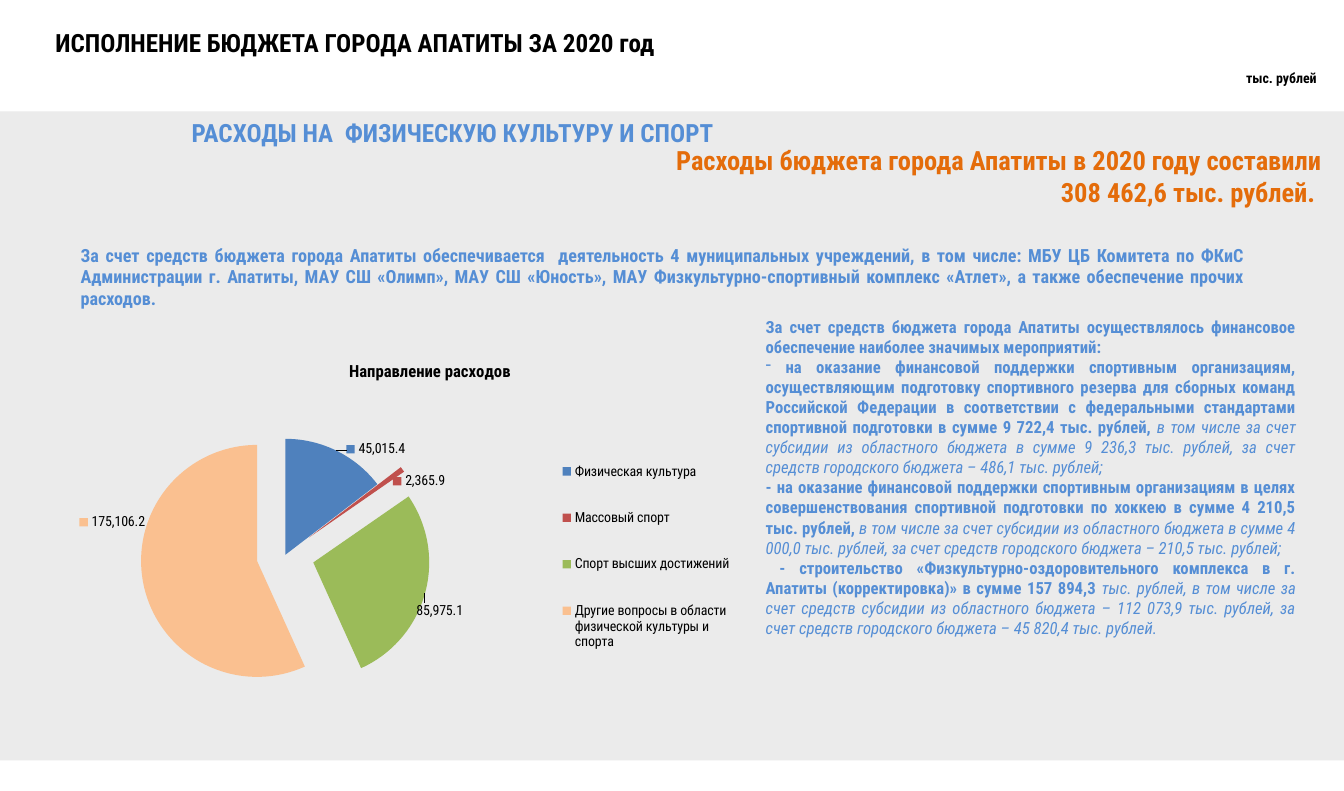
import pptx
import pptx.chart.data
import pptx.dml.color
import pptx.enum.chart
import pptx.enum.shapes
import pptx.enum.text
import pptx.oxml
import pptx.oxml.ns
import pptx.util
from pptx.util import Cm

FONT = "Roboto Condensed"
COLORS = {
    "panel": "EBEBEB",
    "blue": "558ED5",
    "orange": "E46C0A",
    "black": "000000",
    "physical": "4F81BD",
    "mass": "C0504D",
    "elite": "9BBB59",
    "other": "FAC090",
}
EXPENSES = [
    ("Физическая культура", 45015.4, "physical", 0, (0.01, 0.03)),
    ("Массовый спорт", 2365.9, "mass", 25, (-0.02, 0.06)),
    ("Спорт высших достижений", 85975.1, "elite", 25, (-0.02, 0.02)),
    ("Другие вопросы в области физической культуры и спорта", 175106.2, "other", 25,
     (0.01, -0.19)),
]
INTRO = (
    "За счет средств бюджета города Апатиты обеспечивается  деятельность 4 муниципальных "
    "учреждений, в том числе: МБУ ЦБ Комитета по ФКиС Администрации г. Апатиты, "
    "МАУ СШ «Олимп», МАУ СШ «Юность», МАУ Физкультурно-спортивный комплекс «Атлет», "
    "а также обеспечение прочих расходов."
)
EVENTS = [
    ("За счет средств бюджета города Апатиты осуществлялось финансовое обеспечение "
     "наиболее значимых мероприятий: ", ""),
    (" на оказание финансовой поддержки спортивным организациям, осуществляющим "
     "подготовку спортивного резерва для сборных команд Российской Федерации в "
     "соответствии с федеральными стандартами спортивной подготовки в сумме "
     "9 722,4 тыс. рублей, ",
     "в том числе за счет субсидии из областного бюджета в сумме 9 236,3 тыс. рублей, "
     "за счет средств городского бюджета – 486,1 тыс. рублей;"),
    ("- на оказание финансовой поддержки спортивным организациям в целях "
     "совершенствования спортивной подготовки по хоккею в сумме 4 210,5 тыс. рублей, ",
     "в том числе за счет субсидии из областного бюджета в сумме 4 000,0 тыс. рублей, "
     "за счет средств городского бюджета – 210,5 тыс. рублей;"),
    ("- строительство «Физкультурно-оздоровительного комплекса в г. Апатиты "
     "(корректировка)» в сумме 157 894,3 ",
     "тыс. рублей, в том числе за счет средств субсидии из областного бюджета – "
     "112 073,9 тыс. рублей, за счет средств городского бюджета – 45 820,4 тыс. рублей."),
]
ALIGN = pptx.enum.text.PP_ALIGN
ANCHOR = pptx.enum.text.MSO_ANCHOR


def rgb(name):
    return pptx.dml.color.RGBColor.from_string(COLORS[name])


def chart_xml(tag, attributes="", content=""):
    namespace = pptx.oxml.ns.nsdecls("c")
    return pptx.oxml.parse_xml(f"<c:{tag} {namespace} {attributes}>{content}</c:{tag}>")


def style_font(font, size, color, bold=False, italic=False):
    font.name = FONT
    font.size = pptx.util.Pt(size)
    font.bold = bold
    font.italic = italic
    font.color.rgb = rgb(color)


def inside(box, left, top, width, height):
    return Cm(box[0] + left), Cm(box[1] + top), Cm(width), Cm(height)


def fill_text(shape, paragraphs, size, color, align, anchor=ANCHOR.TOP):
    frame = shape.text_frame
    frame.word_wrap = True
    frame.auto_size = pptx.enum.text.MSO_AUTO_SIZE.NONE
    frame.vertical_anchor = anchor
    frame.margin_left = frame.margin_right = Cm(0.3)
    frame.margin_top = frame.margin_bottom = Cm(0.15)
    for index, (strong, detail) in enumerate(paragraphs):
        paragraph = frame.paragraphs[0] if index == 0 else frame.add_paragraph()
        paragraph.alignment = align
        for text, bold in ((strong, True), (detail, False)):
            if text:
                run = paragraph.add_run()
                run.text = text
                style_font(run.font, size, color, bold, not bold)
    return frame


def add_text(slide, position, paragraphs, size, color, align, anchor=ANCHOR.TOP):
    shape = slide.shapes.add_textbox(*position)
    return fill_text(shape, paragraphs, size, color, align, anchor)


def add_header(slide, box):
    title = slide.shapes.title
    title.left, title.top, title.width, title.height = inside(box, 1.1, 0.54, 22.8, 1.05)
    fill_text(title, [("ИСПОЛНЕНИЕ БЮДЖЕТА ГОРОДА АПАТИТЫ ЗА 2020 год", "")],
              18, "black", ALIGN.LEFT)
    add_text(slide, inside(box, 30.41, 1.61, 3.2, 0.74), [("тыс. рублей", "")],
             10, "black", ALIGN.RIGHT)


def add_overview(slide, box):
    panel = slide.shapes.add_shape(pptx.enum.shapes.MSO_SHAPE.RECTANGLE,
                                   *inside(box, 0, 0, *box[2:]))
    panel.shadow.inherit = False
    panel.fill.solid()
    panel.fill.fore_color.rgb = rgb("panel")
    panel.line.fill.background()
    add_text(slide, inside(box, 2.41, 0, 18.08, 1.09),
             [("РАСХОДЫ НА  ФИЗИЧЕСКУЮ КУЛЬТУРУ И СПОРТ", "")], 18, "blue", ALIGN.CENTER)
    add_text(slide, inside(box, 10.95, 0.68, 22.78, 1.9),
             [("Расходы бюджета города Апатиты в 2020 году составили", ""),
              ("308 462,6 тыс. рублей. ", "")],
             19, "orange", ALIGN.RIGHT, ANCHOR.MIDDLE)
    add_text(slide, inside(box, 1.74, 3.2, 30, 1.98), [(INTRO, "")],
             13, "blue", ALIGN.JUSTIFY)


def add_events(slide, box):
    frame = add_text(slide, inside(box, 0, 0, *box[2:]), EVENTS, 12, "blue", ALIGN.JUSTIFY)
    dashed = frame.paragraphs[1]._p.get_or_add_pPr()
    dashed.set("marL", "0")
    dashed.set("indent", "0")
    dashed.append(pptx.oxml.parse_xml(
        f'<a:buChar {pptx.oxml.ns.nsdecls("a")} char="-"/>'))
    frame.paragraphs[3]._p.get_or_add_pPr().set("indent", str(Cm(0.35)))


def set_layout(element, after=None, **places):
    layout = element.find(pptx.oxml.ns.qn("c:layout"))
    if layout is not None:
        element.remove(layout)
    settings = "".join(f'<c:{name} val="{value}"/>' for name, value in places.items())
    layout = chart_xml("layout", content=f"<c:manualLayout>{settings}</c:manualLayout>")
    if after:
        element.find(pptx.oxml.ns.qn(after)).addnext(layout)
    else:
        element.insert(0, layout)


def style_slices(series):
    qn = pptx.oxml.ns.qn
    outside = pptx.enum.chart.XL_LABEL_POSITION.OUTSIDE_END
    labels = series.data_labels
    labels.show_value = True
    labels.number_format = "#,##0.0"
    labels.number_format_is_linked = False
    labels.position = outside
    style_font(labels.font, 10, "black")
    series._element.find(qn("c:tx")).addnext(chart_xml("explosion", 'val="25"'))
    for index, (_, _, color, explosion, (shift_x, shift_y)) in enumerate(EXPENSES):
        point = series.points[index]
        point.format.fill.solid()
        point.format.fill.fore_color.rgb = rgb(color)
        slice_properties = series._element.findall(qn("c:dPt"))[index].find(qn("c:spPr"))
        slice_properties.addprevious(chart_xml("explosion", f'val="{explosion}"'))
        point.data_label.position = outside
        style_font(point.data_label.font, 10, "black")
        label = labels._element.findall(qn("c:dLbl"))[index]
        label.find(qn("c:showLegendKey")).set("val", "0" if color == "elite" else "1")
        set_layout(label, "c:idx", x=shift_x, y=shift_y)


def add_expense_chart(slide, box):
    data = pptx.chart.data.CategoryChartData(number_format="#,##0.0")
    data.categories = [expense[0] for expense in EXPENSES]
    data.add_series("Направление расходов", [expense[1] for expense in EXPENSES])
    chart = slide.shapes.add_chart(pptx.enum.chart.XL_CHART_TYPE.PIE,
                                   *inside(box, 0, 0, *box[2:]), data).chart
    style_font(chart.font, 10, "black")
    chart.has_title = True
    run = chart.chart_title.text_frame.paragraphs[0].add_run()
    run.text = "Направление расходов"
    style_font(run.font, 12, "black", True)
    chart.has_legend = True
    chart.legend.position = pptx.enum.chart.XL_LEGEND_POSITION.RIGHT
    chart.legend.include_in_layout = False
    style_font(chart.legend.font, 10, "black")
    chart.plots[0].vary_by_categories = True
    style_slices(chart.plots[0].series[0])

    edges = {"xMode": "edge", "yMode": "edge"}
    set_layout(chart.chart_title._element, "c:tx", **edges, x=0.41, y=0.05)
    set_layout(chart.legend._element, "c:legendPos", **edges, x=0.7, y=0.25, w=0.26, h=0.65)
    set_layout(chart._chartSpace.chart.plotArea, layoutTarget="inner", **edges,
               x=0.04, y=0.19, w=0.57, h=0.76)


def main():
    presentation = pptx.Presentation()
    presentation.slide_width = Cm(34)
    presentation.slide_height = Cm(20)
    slide = presentation.slides.add_slide(presentation.slide_layouts[5])
    add_header(slide, (0, 0, 34, 2.82))
    add_overview(slide, (0, 2.82, 34, 16.41))
    add_expense_chart(slide, (1.35, 8.53, 18.06, 9.65))
    add_events(slide, (19.07, 7.85, 14.02, 11.07))
    presentation.save("out.pptx")


if __name__ == "__main__":
    main()
